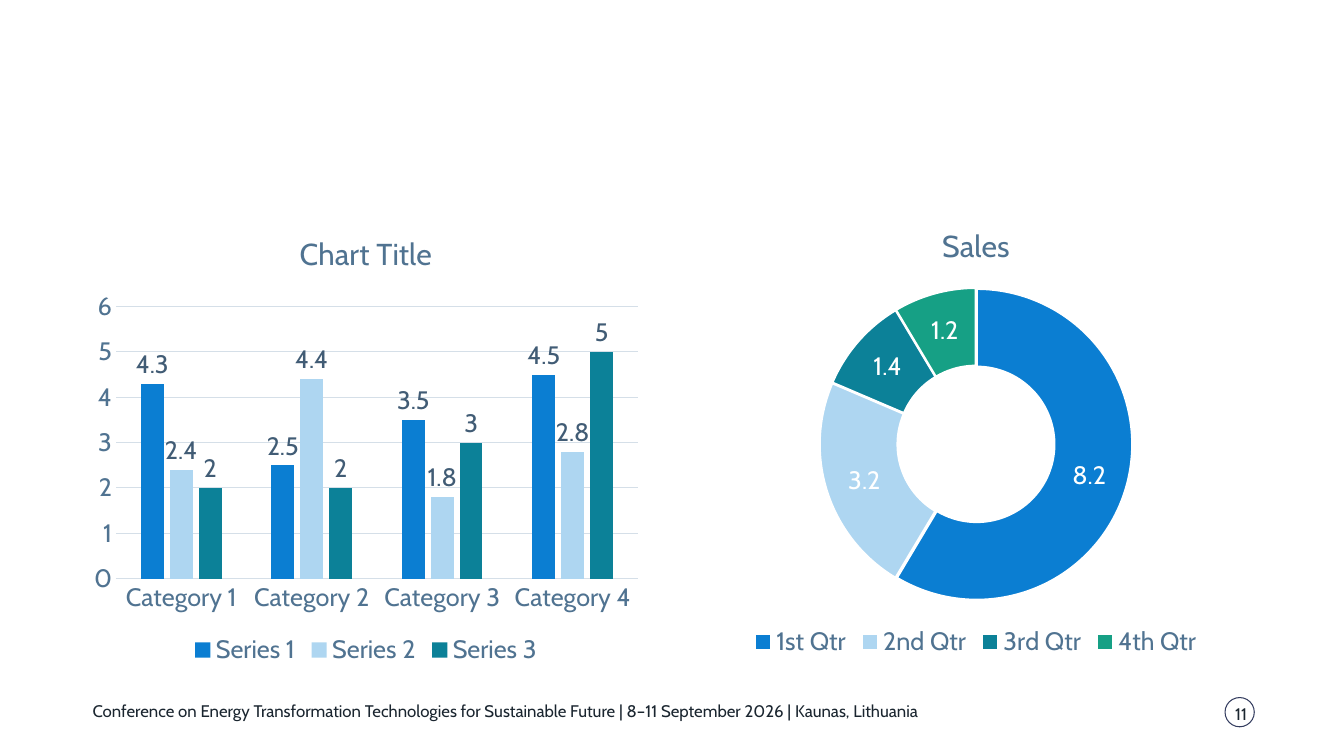
import pptx
import pptx.chart.data
import pptx.dml.color
import pptx.enum.chart
import pptx.enum.shapes
import pptx.enum.text
import pptx.oxml
import pptx.oxml.ns
import pptx.util
from dataclasses import dataclass

Inches = pptx.util.Inches
Pt = pptx.util.Pt

# Content
FOOTER = ("Conference on Energy Transformation Technologies for Sustainable Future"
          " | 8–11 September 2026 | Kaunas, Lithuania")
PAGE_NUMBER = "11"
COLUMN_TITLE = "Chart Title"
COLUMN_CATEGORIES = ["Category 1", "Category 2", "Category 3", "Category 4"]
COLUMN_SERIES = {
    "Series 1": [4.3, 2.5, 3.5, 4.5],
    "Series 2": [2.4, 4.4, 1.8, 2.8],
    "Series 3": [2, 2, 3, 5],
}
SALES_TITLE = "Sales"
SALES = {"1st Qtr": 8.2, "2nd Qtr": 3.2, "3rd Qtr": 1.4, "4th Qtr": 1.2}


@dataclass(frozen=True)
class Theme:
    font: str = "Cabin"
    ink: str = "1A252F"
    muted: str = "507391"
    value: str = "415C75"
    grid: str = "D5DFE8"
    ring: str = "333C5F"
    white: str = "FFFFFF"
    palette: tuple = ("0B7ED2", "AED6F1", "0C8198", "16A085")
    title_size: float = 21.6
    chart_size: float = 18
    footer_size: float = 12


THEME = Theme()

# Positions: left, top, width, height in inches
COLUMN_BOX = (0.82, 2.11, 5.62, 4.54)
SALES_BOX = (6.87, 2.03, 5.62, 4.54)
FOOTER_BOX = (0.82, 6.9, 11.2, 0.3)
RING_BOX = (12.15, 6.92, 0.29, 0.29)
NUMBER_BOX = (12.12, 6.88, 0.38, 0.4)


def inches(box):
    return [Inches(length) for length in box]


def rgb(color):
    return pptx.dml.color.RGBColor.from_string(color)


def style_font(font, size, color):
    font.name = THEME.font
    font.size = Pt(size)
    font.bold = False
    font.color.rgb = rgb(color)


def style_line(line, color, width=0.75):
    line.color.rgb = rgb(color)
    line.width = Pt(width)


def fill_solid(fill, color):
    fill.solid()
    fill.fore_color.rgb = rgb(color)


def add_label(slide, box, text):
    shape = slide.shapes.add_textbox(*inches(box))
    shape.text_frame.word_wrap = True
    run = shape.text_frame.paragraphs[0].add_run()
    run.text = text
    style_font(run.font, THEME.footer_size, THEME.ink)
    return shape.text_frame


def add_titled_chart(slide, kind, box, title, categories, series):
    """Add a chart with a title above and a legend below."""
    data = pptx.chart.data.CategoryChartData()
    data.categories = categories
    for name, values in series.items():
        data.add_series(name, values)
    chart = slide.shapes.add_chart(kind, *inches(box), data).chart
    style_font(chart.font, THEME.chart_size, THEME.ink)
    chart.has_title = True
    run = chart.chart_title.text_frame.paragraphs[0].add_run()
    run.text = title
    style_font(run.font, THEME.title_size, THEME.muted)
    chart.has_legend = True
    chart.legend.position = pptx.enum.chart.XL_LEGEND_POSITION.BOTTOM
    chart.legend.include_in_layout = False
    style_font(chart.legend.font, THEME.chart_size, THEME.muted)
    return chart


def show_values(plot, color):
    plot.has_data_labels = True
    labels = plot.data_labels
    labels.show_value = True
    labels.show_percentage = False
    style_font(labels.font, THEME.chart_size, color)
    return labels


def add_column_chart(slide):
    chart = add_titled_chart(slide, pptx.enum.chart.XL_CHART_TYPE.COLUMN_CLUSTERED,
                             COLUMN_BOX, COLUMN_TITLE, COLUMN_CATEGORIES, COLUMN_SERIES)
    plot = chart.plots[0]
    plot.gap_width = 219
    plot.overlap = -27
    plot.vary_by_categories = False
    for series, color in zip(plot.series, THEME.palette):
        fill_solid(series.format.fill, color)
    labels = show_values(plot, THEME.value)
    labels.position = pptx.enum.chart.XL_LABEL_POSITION.OUTSIDE_END

    for axis in (chart.category_axis, chart.value_axis):
        axis.major_tick_mark = pptx.enum.chart.XL_TICK_MARK.NONE
        axis.minor_tick_mark = pptx.enum.chart.XL_TICK_MARK.NONE
        style_font(axis.tick_labels.font, THEME.chart_size, THEME.muted)
    style_line(chart.category_axis.format.line, THEME.grid)
    chart.value_axis.format.line.fill.background()
    chart.value_axis.has_major_gridlines = True
    style_line(chart.value_axis.major_gridlines.format.line, THEME.grid)


def add_sales_chart(slide):
    chart = add_titled_chart(slide, pptx.enum.chart.XL_CHART_TYPE.DOUGHNUT,
                             SALES_BOX, SALES_TITLE, list(SALES),
                             {SALES_TITLE: list(SALES.values())})
    plot = chart.plots[0]
    plot.vary_by_categories = True
    series = plot.series[0]
    for index, color in enumerate(THEME.palette):
        point_format = series.points[index].format
        fill_solid(point_format.fill, color)
        style_line(point_format.line, THEME.white, 1.5)
    show_values(plot, THEME.white)

    # Slice gap and hole size
    namespace = pptx.oxml.ns.nsdecls("c")
    explosion = pptx.oxml.parse_xml(f'<c:explosion {namespace} val="1"/>')
    series_name = series._element.find(pptx.oxml.ns.qn("c:tx"))
    series_name.addnext(explosion)
    plot._element.find(pptx.oxml.ns.qn("c:holeSize")).set("val", "69")


def add_footer(slide):
    add_label(slide, FOOTER_BOX, FOOTER)
    ring = slide.shapes.add_shape(pptx.enum.shapes.MSO_SHAPE.OVAL, *inches(RING_BOX))
    ring.shadow.inherit = False
    ring.fill.background()
    style_line(ring.line, THEME.ring)
    number = add_label(slide, NUMBER_BOX, PAGE_NUMBER)
    number.margin_left = number.margin_right = 0
    number.vertical_anchor = pptx.enum.text.MSO_ANCHOR.MIDDLE
    number.paragraphs[0].alignment = pptx.enum.text.PP_ALIGN.CENTER


def main():
    presentation = pptx.Presentation()
    presentation.slide_width = Inches(13.33)
    presentation.slide_height = Inches(7.5)
    slide = presentation.slides.add_slide(presentation.slide_layouts[6])
    add_footer(slide)
    add_column_chart(slide)
    add_sales_chart(slide)
    presentation.save("out.pptx")


if __name__ == "__main__":
    main()
